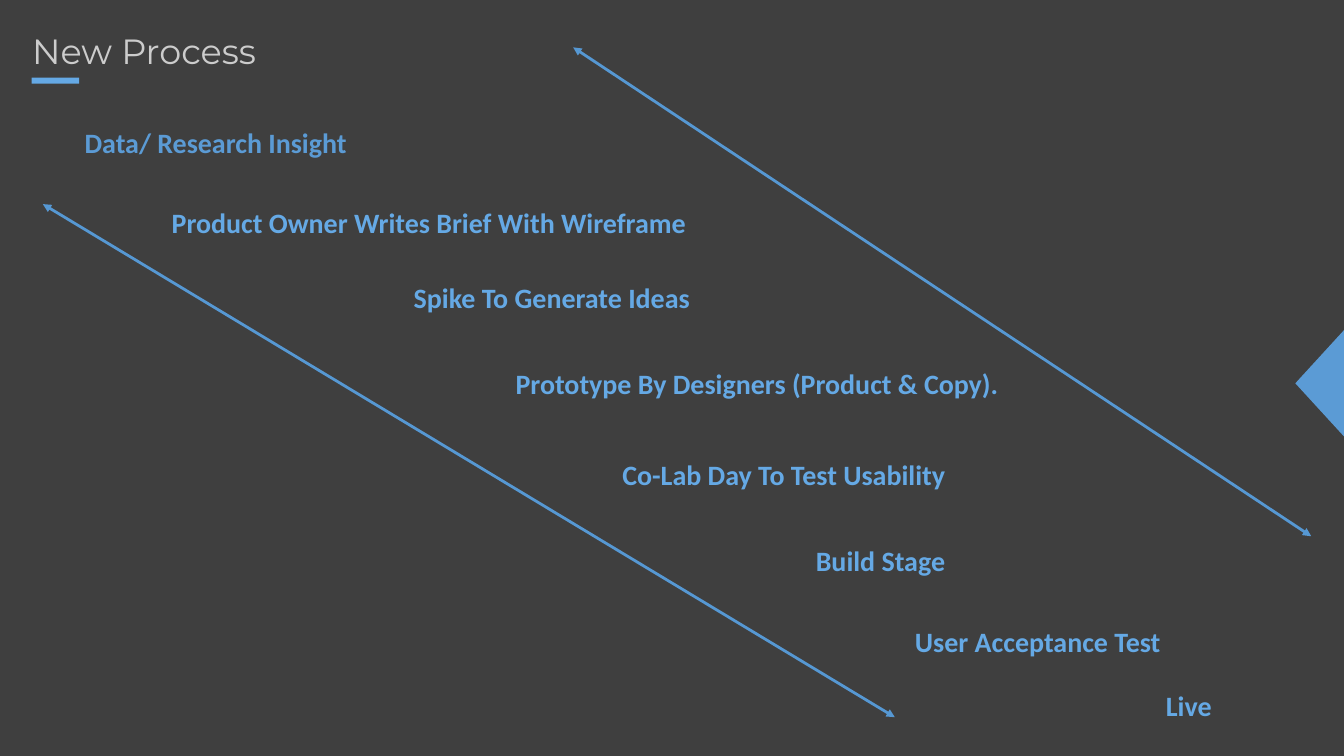
"""Build the New Process slide: a diagonal run of stages between two arrows."""
from dataclasses import dataclass

from lxml import etree
from pptx import Presentation
from pptx.dml.color import RGBColor
from pptx.enum.shapes import MSO_CONNECTOR, MSO_SHAPE
from pptx.enum.text import MSO_ANCHOR, PP_ALIGN
from pptx.oxml.ns import qn
from pptx.util import Inches, Pt

STRAIGHT = MSO_CONNECTOR.STRAIGHT
RECTANGLE = MSO_SHAPE.RECTANGLE
TRIANGLE = MSO_SHAPE.ISOSCELES_TRIANGLE
LEFT, CENTER = PP_ALIGN.LEFT, PP_ALIGN.CENTER
TOP, MIDDLE = MSO_ANCHOR.TOP, MSO_ANCHOR.MIDDLE


@dataclass(frozen=True)
class Theme:
    background: RGBColor = RGBColor.from_string("3F3F3F")
    heading: RGBColor = RGBColor.from_string("CCCCCC")
    stage: RGBColor = RGBColor.from_string("65A9E5")
    accent: RGBColor = RGBColor.from_string("5B9BD5")
    arrow: RGBColor = RGBColor.from_string("5698D3")
    heading_font: str = "Montserrat"
    stage_font: str = "Calibri"
    heading_size: int = 50
    stage_size: int = 40
    arrow_width: int = 4


THEME = Theme()

STAGES = [
    ("Data/ Research Insight ", (1.33, 2.34, 6.02, 0.84), THEME.accent, TOP),
    ("Product Owner Writes Brief With Wireframe", (2.82, 3.92, 11.37, 0.81), THEME.stage, TOP),
    ("Spike To Generate Ideas", (7.3, 5.43, 7.29, 0.84), THEME.stage, MIDDLE),
    ("Prototype By Designers (Product & Copy).", (9.11, 7.12, 11.81, 0.88), THEME.stage, TOP),
    ("Co-Lab Day To Test Usability ", (11.9, 8.93, 7.42, 0.88), THEME.stage, TOP),
    ("Build Stage", (15.61, 10.64, 3.71, 0.88), THEME.stage, TOP),
    ("User Acceptance Test", (17.43, 12.25, 6.31, 0.88), THEME.stage, TOP),
    ("Live", (22.07, 13.51, 3.02, 0.67), THEME.stage, TOP),
]

ARROWS = [
    (0.85, 4.05, 17.75, 14.23),
    (11.37, 0.94, 26.01, 10.64),
]


def inches(lengths):
    return [Inches(length) for length in lengths]


def apply(target, values):
    for name, value in values.items():
        setattr(target, name, value)


def add_label(slide, wording, place, font, color, paragraph_format, anchor=TOP):
    frame = slide.shapes.add_textbox(*inches(place)).text_frame
    apply(frame, {"word_wrap": True, "vertical_anchor": anchor})
    paragraph = frame.paragraphs[0]
    apply(paragraph, paragraph_format)
    run = paragraph.add_run()
    run.text = wording
    apply(run.font, font)
    run.font.color.rgb = color


def add_block(slide, outline, place, color, rotation=0):
    block = slide.shapes.add_shape(outline, *inches(place))
    block.rotation = rotation
    block.shadow.inherit = False
    block.fill.solid()
    block.fill.fore_color.rgb = color
    block.line.fill.background()


def add_double_arrow(slide, ends):
    arrow = slide.shapes.add_connector(STRAIGHT, *inches(ends))
    arrow.line.color.rgb = THEME.arrow
    arrow.line.width = Pt(THEME.arrow_width)
    properties = arrow.line._get_or_add_ln()
    for end in ("a:headEnd", "a:tailEnd"):
        etree.SubElement(properties, qn(end), type="triangle")
    etree.SubElement(arrow._element.spPr, qn("a:effectLst"))


def main():
    deck = Presentation()
    apply(deck, {"slide_width": Inches(26.66), "slide_height": Inches(15)})
    slide = deck.slides.add_slide(deck.slide_layouts[6])
    slide.background.fill.solid()
    slide.background.fill.fore_color.rgb = THEME.background

    heading_font = {"name": THEME.heading_font, "size": Pt(THEME.heading_size)}
    add_label(slide, "New Process", (0.54, 0.54, 7.6, 0.81), heading_font,
              THEME.heading, {"alignment": LEFT})
    add_block(slide, RECTANGLE, (0.63, 1.54, 0.94, 0.12), THEME.stage)
    add_block(slide, TRIANGLE, (25.12, 7.12, 2.12, 0.97), THEME.accent, rotation=270)

    stage_font = {"name": THEME.stage_font, "size": Pt(THEME.stage_size), "bold": True}
    stage_paragraph = {"alignment": CENTER, "line_spacing": 1.15}
    for wording, place, color, anchor in STAGES:
        add_label(slide, wording, place, stage_font, color, stage_paragraph, anchor)

    for ends in ARROWS:
        add_double_arrow(slide, ends)
    deck.save("out.pptx")


if __name__ == "__main__":
    main()
